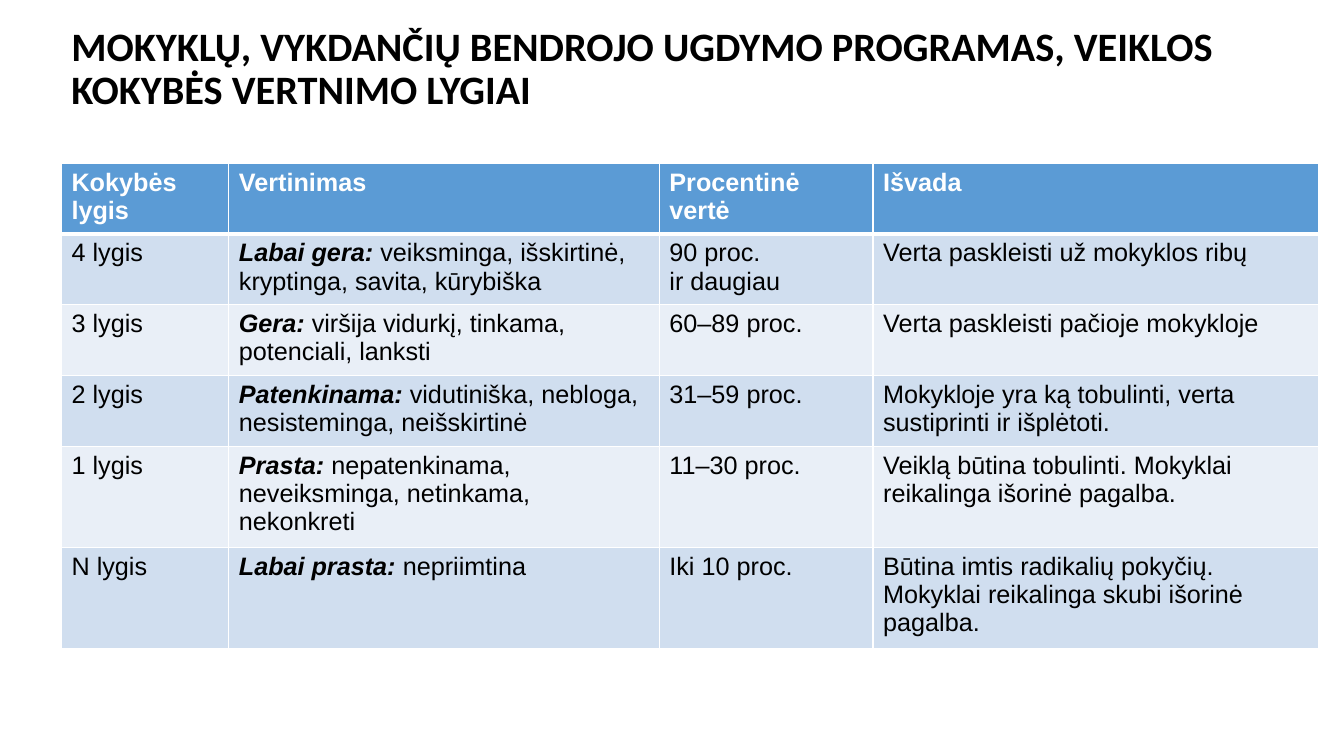
from lxml import etree
from pptx import Presentation
from pptx.dml.color import RGBColor
from pptx.enum.text import MSO_ANCHOR
from pptx.oxml.ns import qn
from pptx.util import Inches, Pt

MIDDLE = MSO_ANCHOR.MIDDLE
COLORS = {"white": "FFFFFF", "black": "000000", "header": "5B9BD5",
          "band_dark": "D0DEEF", "band_light": "E9EFF7"}
TITLE = "MOKYKLŲ, VYKDANČIŲ BENDROJO UGDYMO PROGRAMAS, VEIKLOS KOKYBĖS VERTNIMO LYGIAI"
COL_WIDTHS = [1.66, 4.27, 2.12, 4.42]
ROW_HEIGHTS = [0.67, 0.67, 0.67, 0.71, 0.67, 0.96]
RATING_COL = 1
ROWS = [
    ["Kokybės lygis", "Vertinimas", "Procentinė vertė", "Išvada"],
    ["4 lygis", "Labai gera: veiksminga, išskirtinė, kryptinga, savita, kūrybiška",
     "90 proc.\nir daugiau", "Verta paskleisti už mokyklos ribų"],
    ["3 lygis", "Gera: viršija vidurkį, tinkama, potenciali, lanksti",
     "60–89 proc.", "Verta paskleisti pačioje mokykloje"],
    ["2 lygis", "Patenkinama: vidutiniška, nebloga, nesisteminga, neišskirtinė",
     "31–59 proc.", "Mokykloje yra ką tobulinti, verta sustiprinti ir išplėtoti."],
    ["1 lygis", "Prasta: nepatenkinama, neveiksminga, netinkama, nekonkreti",
     "11–30 proc.", "Veiklą būtina tobulinti. Mokyklai reikalinga išorinė pagalba."],
    ["N lygis", "Labai prasta: nepriimtina", "Iki 10 proc.",
     "Būtina imtis radikalių pokyčių. Mokyklai reikalinga skubi išorinė pagalba."],
]


def add_run(p, text, color, **font):
    r = p.add_run()
    r.text = text
    r.font.color.rgb = RGBColor.from_string(COLORS[color])
    for name, value in font.items():
        setattr(r.font, name, value)


def set_borders(cell, widths):
    """Draw white cell borders; widths maps a side letter to points."""
    tc_pr = cell._tc.get_or_add_tcPr()
    for side, width in widths.items():
        ln = etree.SubElement(tc_pr, qn(f"a:ln{side}"), w=str(Pt(width)))
        fill = etree.SubElement(ln, qn("a:solidFill"))
        etree.SubElement(fill, qn("a:srgbClr"), val=COLORS["white"])


prs = Presentation()
prs.slide_width, prs.slide_height = Inches(13.33), Inches(7.5)
s = prs.slides.add_slide(prs.slide_layouts[6])

title = s.shapes.add_textbox(Inches(0.61), Inches(0.17), Inches(11.59), Inches(1.05))
tf = title.text_frame
tf.word_wrap = True
tf.vertical_anchor = MIDDLE
p = tf.paragraphs[0]
p.line_spacing = 0.9
add_run(p, TITLE, "black", name="Calibri", size=Pt(28.8), bold=True)

table = s.shapes.add_table(len(ROWS), len(COL_WIDTHS), Inches(0.61), Inches(1.62),
                           Inches(sum(COL_WIDTHS)), Inches(sum(ROW_HEIGHTS))).table
for column, width in zip(table.columns, COL_WIDTHS):
    column.width = Inches(width)
for row, height in zip(table.rows, ROW_HEIGHTS):
    row.height = Inches(height)

for i, texts in enumerate(ROWS):
    is_header = i == 0
    fill = "header" if is_header else "band_dark" if i % 2 else "band_light"
    color = "white" if is_header else "black"
    for j, text in enumerate(texts):
        cell = table.cell(i, j)
        set_borders(cell, {"L": 1, "R": 1, "T": 3 if i == 1 else 1,
                           "B": 3 if is_header else 1})
        cell.fill.solid()
        cell.fill.fore_color.rgb = RGBColor.from_string(COLORS[fill])
        tf = cell.text_frame
        for k, line in enumerate(text.split("\n")):
            p = tf.add_paragraph() if k else tf.paragraphs[0]
            font = {"name": "Arial", "size": Pt(18)}
            if j == RATING_COL and not is_header:
                rating, line = line.split(": ")
                add_run(p, rating + ": ", color, bold=True, italic=True, **font)
            add_run(p, line, color, bold=is_header, italic=False, **font)

prs.save("out.pptx")
